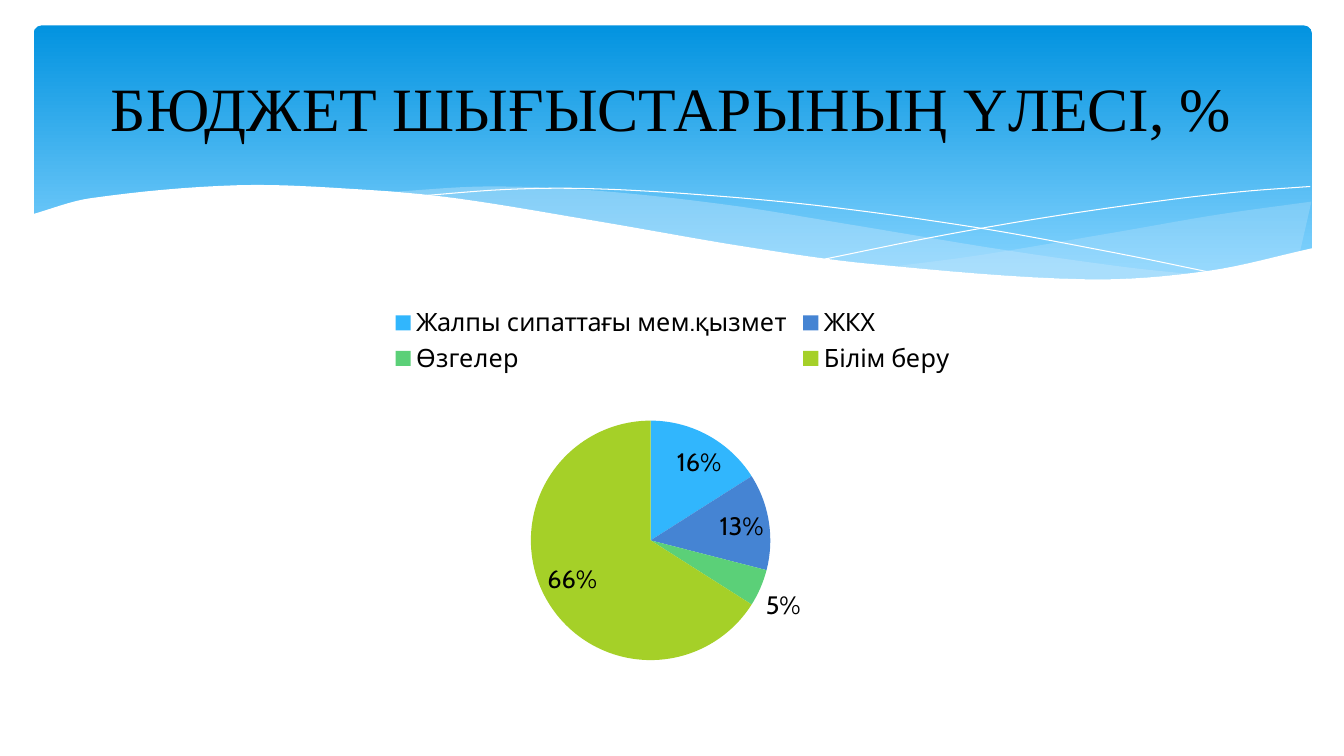
from itertools import pairwise
from lxml.etree import SubElement
from pptx import Presentation
from pptx.chart.data import CategoryChartData
from pptx.dml.color import RGBColor
from pptx.enum.chart import XL_CHART_TYPE as ChartType, XL_LABEL_POSITION as LabelPos, XL_LEGEND_POSITION as LegendPos
from pptx.enum.shapes import MSO_SHAPE as Preset
from pptx.enum.text import MSO_ANCHOR as Anchor, PP_ALIGN as Align
from pptx.oxml.ns import qn
from pptx.util import Cm, Pt

COLORS = {
    "sky_top": "0293E0", "sky_bottom": "83D3FE", "mist": "C6E7FC",
    "white": "FFFFFF", "ink": "000000",
    "general": "31B6FD", "housing": "4584D3", "other": "5BD078", "education": "A5D028",
}
TITLE_FONT = {"size": Pt(44), "name": "Times New Roman"}
CHART_FONT = {"size": Pt(18), "name": "Cabin"}
LABEL_FORMAT = {"show_percentage": True, "show_value": False, "number_format": "0%",
                "number_format_is_linked": False, "position": LabelPos.BEST_FIT}

CURVE_STEPS = 8
WAVE_BOTTOM = 8.36
SHORE = [(0.79, 5.41), (2.26, 5), (5.97, 4.67), (9.17, 4.78), (11.51, 5), (15.14, 5.59),
         (18.8, 6.22), (21.92, 6.65), (27.38, 7.04), (30.43, 6.83), (33.1, 6.25)]
RIGHT_CREST = [(22.4, 6.73), (24.69, 6.43), (28.19, 5.84), (30.68, 5.41), (33.05, 5.08)]
MIDDLE_CREST = [(9.7, 4.85), (12.24, 4.7), (14.96, 4.8), (18.31, 5.16),
                (21.31, 5.64), (25.12, 6.27), (28.35, 6.73), (30.23, 6.93)]
FALLING_LINE = [(10.46, 4.95), (12.67, 4.78), (14.66, 4.75), (17.27, 4.88),
                (20.6, 5.18), (24.64, 5.74), (28.14, 6.38), (30.73, 6.91)]
RISING_LINE = [(20.78, 6.53), (23.55, 5.97), (26.29, 5.49), (29.34, 5.05),
               (31.29, 4.83), (33.02, 4.7)]

SPENDING = [
    ("Жалпы сипаттағы мем.қызмет", 16, "general"),
    ("ЖКХ", 13, "housing"),
    ("Өзгелер", 5, "other"),
    ("Білім беру", 66, "education"),
]


def rgb(name):
    return RGBColor.from_string(COLORS[name])


def slope(start, end):
    return (end[1] - start[1]) / (end[0] - start[0])


def smooth(anchors):
    before = anchors[:1] + anchors[:-1]
    after = anchors[1:] + anchors[-1:]
    slopes = [slope(left, right) for left, right in zip(before, after)]
    points = [anchors[0]]
    for ((x0, y0), slope0), ((x1, y1), slope1) in pairwise(zip(anchors, slopes)):
        width = x1 - x0
        for step in range(1, CURVE_STEPS + 1):
            t = step / CURVE_STEPS
            blend = t * t * (3 - 2 * t)
            bend = t * (1 - t) * ((1 - t) * slope0 - t * slope1)
            points.append((x0 + t * width, y0 + blend * (y1 - y0) + width * bend))
    return points


def above_shore(crest):
    left, right = crest[0][0], crest[-1][0]
    shore = [point for point in smooth(SHORE) if left < point[0] < right]
    return smooth(crest) + shore[::-1]


def below_shore():
    left, right = SHORE[0][0], SHORE[-1][0]
    return smooth(SHORE) + [(right, WAVE_BOTTOM), (left, WAVE_BOTTOM)]


class BudgetSlide:
    """Draws styled elements on the current slide."""

    def __init__(self, deck):
        self.slide = deck.slides.add_slide(deck.slide_layouts[6])

    def style(self, font, values):
        for key, value in values.items():
            setattr(font, key, value)
        font.color.rgb = rgb("ink")

    def banner(self, box):
        banner = self.slide.shapes.add_shape(Preset.ROUNDED_RECTANGLE, *map(Cm, box))
        banner.adjustments[0] = 0.03
        banner.shadow.inherit = False
        banner.line.fill.background()
        banner.fill.gradient()
        banner.fill.gradient_angle = 270
        stops = zip(banner.fill.gradient_stops, (0, 0.9), ("sky_top", "sky_bottom"))
        for stop, position, color in stops:
            stop.position = position
            stop.color.rgb = rgb(color)

    def outline(self, points, closed):
        start, *rest = [(Cm(x), Cm(y)) for x, y in points]
        builder = self.slide.shapes.build_freeform(*start)
        builder.add_line_segments(rest, close=closed)
        outline = builder.convert_to_shape()
        outline.shadow.inherit = False
        return outline

    def wave(self, points, color, opacity=100):
        wave = self.outline(points, True)
        wave.line.fill.background()
        wave.fill.solid()
        wave.fill.fore_color.rgb = rgb(color)
        if opacity < 100:
            tint = wave._element.spPr.find(f"{qn('a:solidFill')}/{qn('a:srgbClr')}")
            SubElement(tint, qn("a:alpha")).set("val", str(opacity * 1000))

    def hairline(self, anchors):
        hairline = self.outline(smooth(anchors), False)
        hairline.fill.background()
        hairline.line.color.rgb = rgb("white")
        hairline.line.width = Pt(0)

    def title(self, text, box):
        frame = self.slide.shapes.add_textbox(*map(Cm, box)).text_frame
        frame.word_wrap = True
        frame.vertical_anchor = Anchor.MIDDLE
        heading = frame.paragraphs[0]
        heading.alignment = Align.CENTER
        run = heading.add_run()
        run.text = text
        self.style(run.font, TITLE_FONT)

    def pie(self, rows, box, plot_box):
        names, shares, colors = zip(*rows)
        data = CategoryChartData()
        data.categories = names
        data.add_series("Series 1", shares)
        chart = self.slide.shapes.add_chart(ChartType.PIE, *map(Cm, box), data).chart
        chart.has_title = False
        self.style(chart.font, CHART_FONT)
        chart.has_legend = True
        chart.legend.position = LegendPos.TOP
        chart.legend.include_in_layout = False
        plot = chart.plots[0]
        plot.vary_by_categories = True
        plot.has_data_labels = True
        for key, value in LABEL_FORMAT.items():
            setattr(plot.data_labels, key, value)
        self.style(plot.data_labels.font, CHART_FONT)
        for index, color in enumerate(colors):
            fill = plot.series[0].points[index].format.fill
            fill.solid()
            fill.fore_color.rgb = rgb(color)
        self.place_plot(chart, plot_box)

    def place_plot(self, chart, plot_box):
        area = chart._chartSpace.chart.plotArea
        for unused in area.findall(qn("c:layout")):
            area.remove(unused)
        layout = SubElement(area, qn("c:layout"))
        area.insert(0, layout)
        manual = SubElement(layout, qn("c:manualLayout"))
        settings = {"layoutTarget": "inner", "xMode": "edge", "yMode": "edge"}
        settings.update(zip("xywh", plot_box))
        for tag, value in settings.items():
            SubElement(manual, qn(f"c:{tag}")).set("val", str(value))


def main():
    deck = Presentation()
    deck.slide_width, deck.slide_height = Cm(33.87), Cm(19.05)
    page = BudgetSlide(deck)
    page.banner((0.85, 0.64, 32.21, 6.86))
    for crest, opacity in ((RIGHT_CREST, 29), (MIDDLE_CREST, 40)):
        page.wave(above_shore(crest), "mist", opacity)
    for anchors in (FALLING_LINE, RISING_LINE):
        page.hairline(anchors)
    page.wave(below_shore(), "white")
    page.title("БЮДЖЕТ ШЫҒЫСТАРЫНЫҢ ҮЛЕСІ, %", (1.69, 0.95, 30.48, 3.48))
    page.pie(SPENDING, (3.23, 7.44, 27.43, 9.58), (0.37, 0.33, 0.22, 0.63))
    deck.save("out.pptx")


if __name__ == "__main__":
    main()
